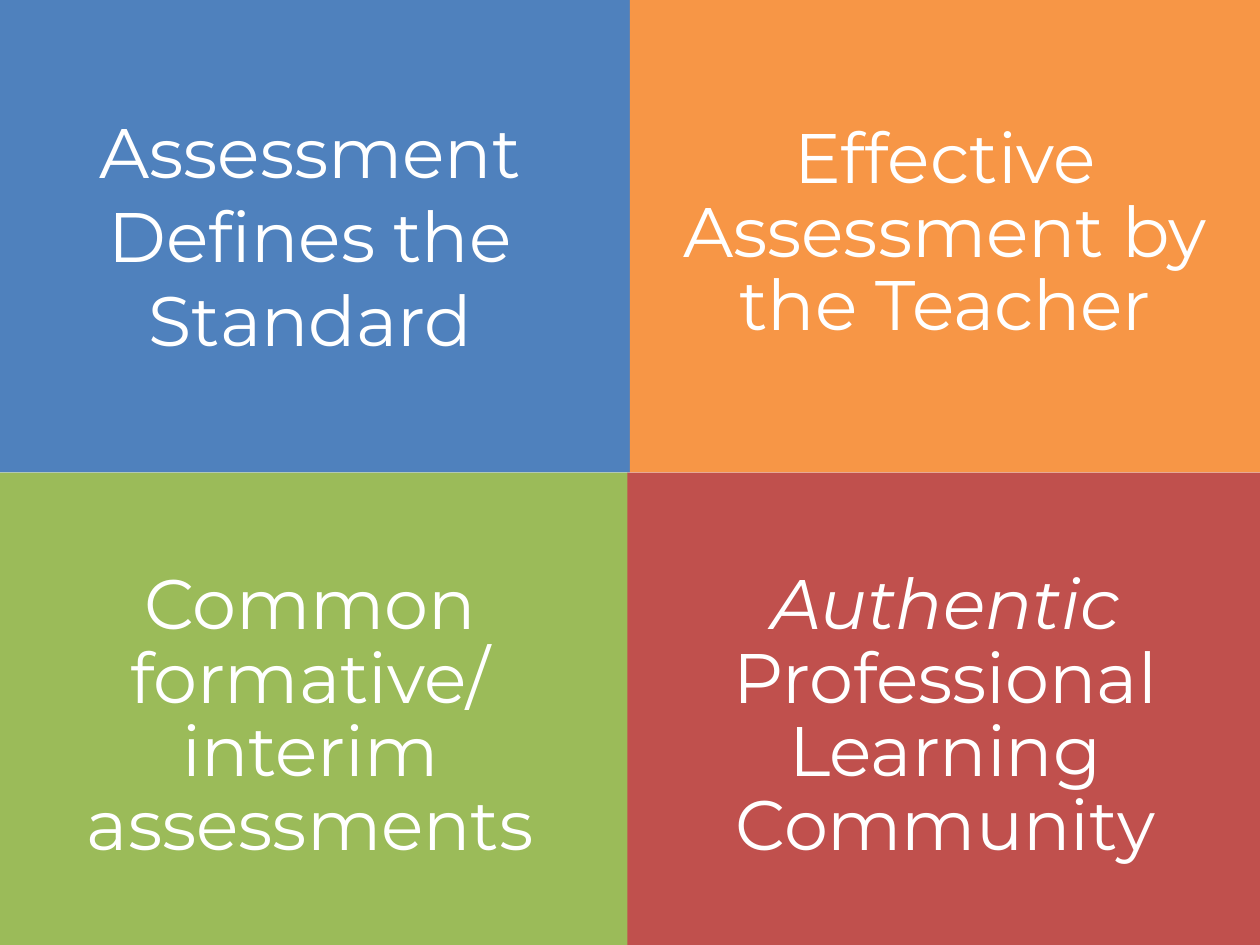
"""Build a slide of four coloured quadrants, each with a centred statement."""
from dataclasses import dataclass
from typing import Optional

from pptx import Presentation
from pptx import util as u
from pptx.dml.color import RGBColor
from pptx.enum import shapes, text
from pptx.slide import Slide

FONT = "Montserrat"
WHITE = "FFFFFF"
WIDTH, HEIGHT = 25.4, 19.05
MID_X, MID_Y = WIDTH / 2, HEIGHT / 2
TEXT_W = 11.23
TEXT_LEFT, TEXT_RIGHT = 0.64, 13.44


@dataclass(frozen=True)
class Run:
    text: str
    italic: bool = False


@dataclass(frozen=True)
class Quadrant:
    left: float
    top: float
    width: float
    fill: str
    text_left: float
    text_top: float
    text_height: float
    lines: tuple[tuple[Run, ...], ...]
    spacing: Optional[int] = 42


QUADRANTS = (
    Quadrant(0, 0, MID_X, "4F81BD", TEXT_LEFT, 2.03, 5.38,
             ((Run("Assessment Defines the Standard"),),), None),
    Quadrant(MID_X, 0, MID_X, "F79646", TEXT_RIGHT, 1.6, 6.25,
             ((Run("Effective Assessment by the Teacher"),),)),
    Quadrant(-0.03, MID_Y, MID_X, "9BBB59", TEXT_LEFT, 11.33, 6.25,
             ((Run("Common formative/"),), (Run("interim assessments"),))),
    Quadrant(12.65, MID_Y, 12.75, "C0504D", TEXT_RIGHT, 11.33, 6.25,
             ((Run("Authentic", italic=True),), (Run("Professional"),),
              (Run("Learning Community"),))),
)


def color(value: str) -> RGBColor:
    return RGBColor.from_string(value)


def draw_panel(s: Slide, q: Quadrant) -> None:
    sp = s.shapes.add_shape(shapes.MSO_SHAPE.RECTANGLE, u.Cm(q.left),
                            u.Cm(q.top), u.Cm(q.width), u.Cm(MID_Y))
    sp.shadow.inherit = False
    sp.fill.solid()
    sp.fill.fore_color.rgb = color(q.fill)
    sp.line.fill.background()


def draw_statement(s: Slide, q: Quadrant) -> None:
    sp = s.shapes.add_textbox(u.Cm(q.text_left), u.Cm(q.text_top),
                              u.Cm(TEXT_W), u.Cm(q.text_height))
    tf = sp.text_frame
    tf.word_wrap = True
    tf.auto_size = text.MSO_AUTO_SIZE.SHAPE_TO_FIT_TEXT
    tf.vertical_anchor = text.MSO_ANCHOR.MIDDLE
    p = tf.paragraphs[0]
    p.alignment = text.PP_ALIGN.CENTER
    if q.spacing:
        p.line_spacing = u.Pt(q.spacing)
    for i, line in enumerate(q.lines):
        if i:
            p.add_line_break()
        for run in line:
            r = p.add_run()
            r.text = run.text
            r.font.name = FONT
            r.font.size = u.Pt(40)
            r.font.italic = run.italic
            r.font.color.rgb = color(WHITE)


def main() -> None:
    prs = Presentation()
    prs.slide_width, prs.slide_height = u.Cm(WIDTH), u.Cm(HEIGHT)
    s = prs.slides.add_slide(prs.slide_layouts[6])
    for draw in (draw_panel, draw_statement):
        for q in QUADRANTS:
            draw(s, q)
    prs.save("out.pptx")


if __name__ == "__main__":
    main()
